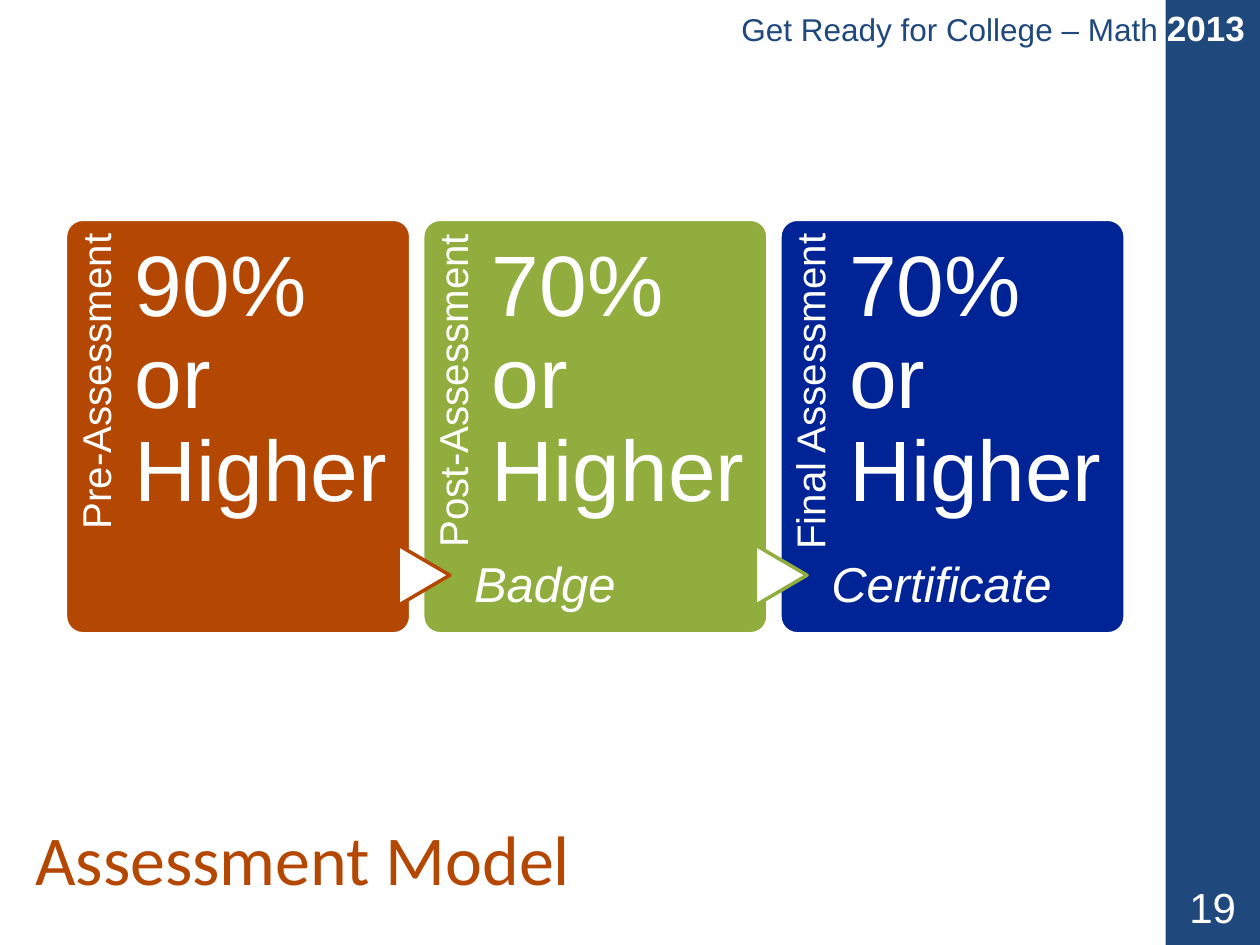
from pptx import Presentation
from pptx.dml.color import RGBColor
from pptx.enum.shapes import MSO_SHAPE as Shape
from pptx.enum.text import MSO_ANCHOR as Anchor, MSO_AUTO_SIZE as AutoSize, PP_ALIGN as Align
from pptx.util import Inches, Pt

COLORS = {
    "navy": "1F497D",
    "rust": "B44702",
    "green": "90AD3E",
    "blue": "002395",
    "white": "FFFFFF",
}
DEFAULT_INSETS = (0.1, 0.05, 0.1, 0.05)
STAGES = [
    ("Pre-Assessment", "90% or Higher", None, "rust"),
    ("Post-Assessment", "70% or Higher", "Badge", "green"),
    ("Final Assessment", "70% or Higher", "Certificate", "blue"),
]


def rgb(name):
    return RGBColor.from_string(COLORS[name])


def style_font(font, size, color, name="Arial", bold=False, italic=False):
    font.name = name
    font.size = Pt(size)
    font.color.rgb = rgb(color)
    font.bold = bold
    font.italic = italic


def add_box(slide, kind, box, fill, line=None):
    shape = slide.shapes.add_shape(kind, *map(Inches, box))
    shape.shadow.inherit = False
    shape.fill.solid()
    shape.fill.fore_color.rgb = rgb(fill)
    if line:
        shape.line.color.rgb = rgb(line)
        shape.line.width = Pt(2)
    else:
        shape.line.fill.background()
    return shape


def set_frame(shape, insets=DEFAULT_INSETS, anchor=Anchor.TOP):
    """Set wrapping, insets and anchor, and return the first paragraph."""
    frame = shape.text_frame
    frame.word_wrap = True
    frame.auto_size = AutoSize.NONE
    frame.vertical_anchor = anchor
    (frame.margin_left, frame.margin_top,
     frame.margin_right, frame.margin_bottom) = map(Inches, insets)
    return frame.paragraphs[0]


def add_text(slide, box, text, size, color="white", italic=False, align=Align.LEFT,
             spacing=1.0, rotation=0, insets=DEFAULT_INSETS, anchor=Anchor.TOP):
    text_box = slide.shapes.add_textbox(*map(Inches, box))
    text_box.rotation = rotation
    paragraph = set_frame(text_box, insets, anchor)
    paragraph.text = text
    paragraph.alignment = align
    paragraph.line_spacing = spacing
    style_font(paragraph.font, size, color, italic=italic)


def add_sidebar(slide, left, top, width, height):
    add_box(slide, Shape.RECTANGLE, (left, top, width, height), "navy")
    add_text(slide, (left, top + height - 0.5, width, 0.4), "19", 24,
             align=Align.CENTER, anchor=Anchor.MIDDLE)


def add_header(slide, left, top, width, height):
    text_box = slide.shapes.add_textbox(*map(Inches, (left, top, width, height)))
    paragraph = set_frame(text_box, (0.1, 0.05, 0.19, 0.05))
    paragraph.alignment = Align.RIGHT
    course = paragraph.add_run()
    course.text = "Get Ready for College – Math "
    style_font(course.font, 18, "navy")
    year = paragraph.add_run()
    year.text = "2013"
    style_font(year.font, 20, "white", bold=True)


def place_title(slide, left, top, width, height):
    title = slide.shapes.title
    title.left, title.top, title.width, title.height = map(
        Inches, (left, top, width, height))
    paragraph = set_frame(title)
    paragraph.text = "Assessment Model"
    paragraph.alignment = Align.LEFT
    style_font(paragraph.font, 40, "rust", name="Calibri")


def add_stage(slide, left, top, width, height, stage, arrow_color=None):
    """Draw one panel, with an arrow from the previous panel if it has a colour."""
    label, requirement, award, color = stage
    panel = add_box(slide, Shape.ROUNDED_RECTANGLE, (left, top, width, height),
                    color, "white")
    panel.adjustments[0] = 0.05
    add_text(slide, (left - 1.08, top + 1.08, 2.7, 0.55), label, 23,
             align=Align.RIGHT, spacing=0.9, rotation=270, insets=(0, 0.09, 0.11, 0))
    if arrow_color:
        arrow = add_box(slide, Shape.FLOWCHART_EXTRACT,
                        (left - 0.23, top + 2.62, 0.48, 0.41), "white", arrow_color)
        arrow.rotation = 90
    add_text(slide, (left + 0.55, top, 2.04, height), requirement, 49,
             spacing=0.9, insets=(0, 0.18, 0, 0))
    if award:
        add_text(slide, (left + 0.31, top + 2.6, 2.3, 0.57), award, 28, italic=True)


def add_stages(slide, left, top, width, height):
    panel_width = 2.74
    pitch = (width - panel_width) / (len(STAGES) - 1)
    arrow_color = None
    for index, stage in enumerate(STAGES):
        add_stage(slide, left + index * pitch, top, panel_width, height,
                  stage, arrow_color)
        arrow_color = stage[-1]


def main():
    presentation = Presentation()
    presentation.slide_width = Inches(10)
    presentation.slide_height = Inches(7.5)
    slide = presentation.slides.add_slide(presentation.slide_layouts[5])
    add_sidebar(slide, 9.25, 0, 0.75, 7.5)
    add_header(slide, 3.92, 0, 6.15, 0.44)
    place_title(slide, 0.18, 6.42, 8.74, 0.77)
    add_stages(slide, 0.52, 1.74, 8.41, 3.29)
    presentation.save("out.pptx")


if __name__ == "__main__":
    main()
